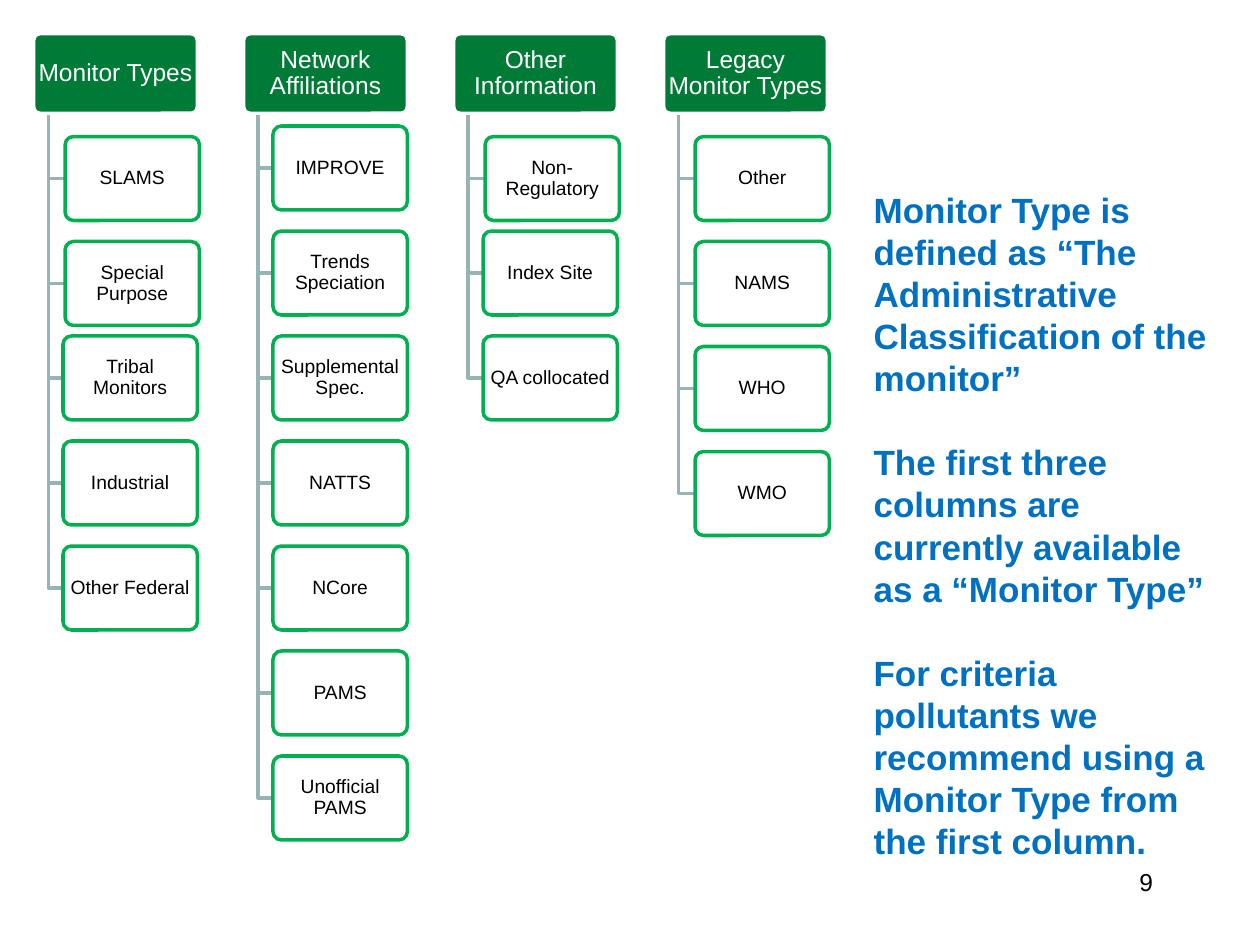
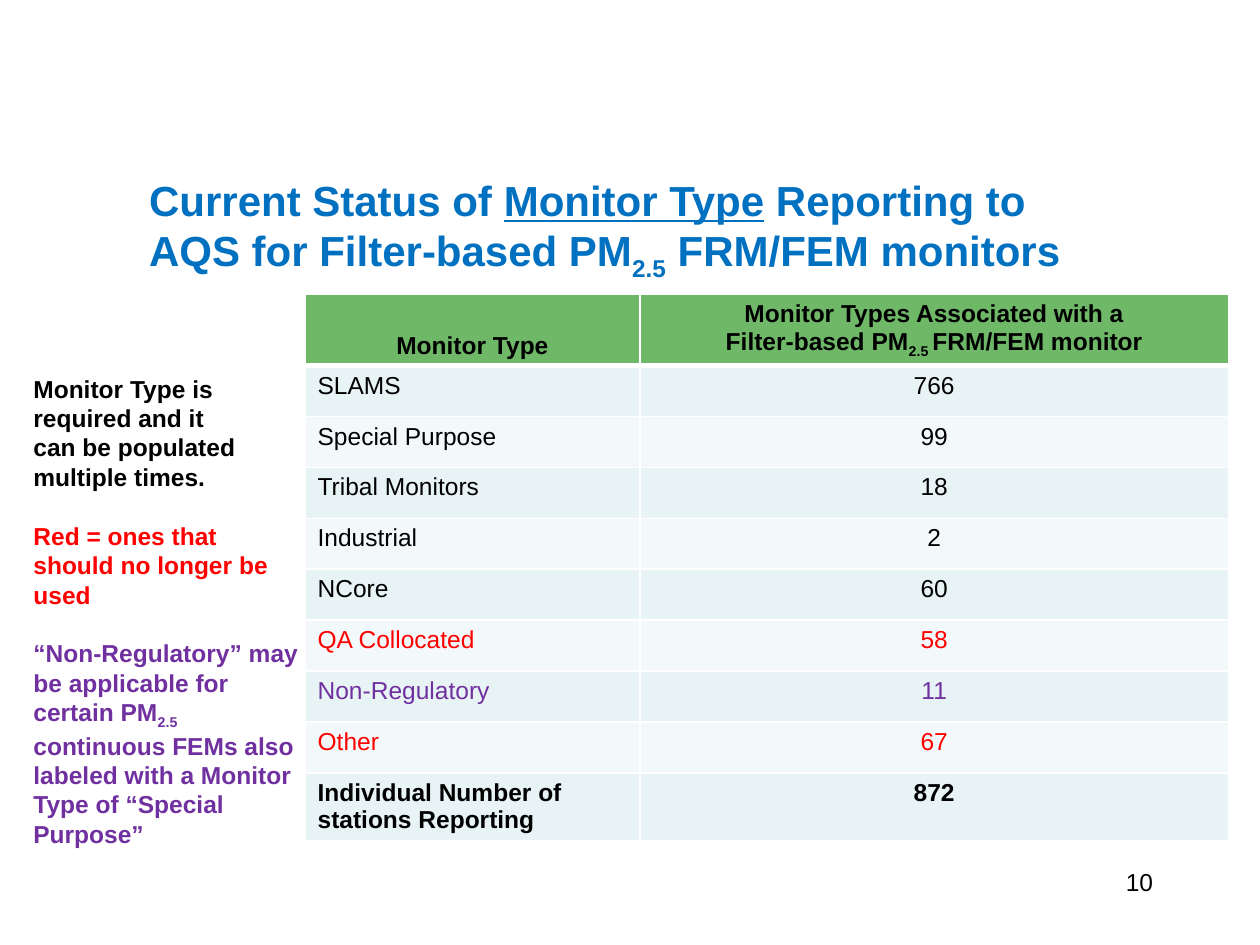
"""Builds two slides on monitor types: a column hierarchy and a status table."""
from dataclasses import dataclass

from lxml.etree import SubElement
from pptx import Presentation
from pptx.dml.color import RGBColor
from pptx.enum.shapes import MSO_SHAPE as Shape
from pptx.enum.text import MSO_ANCHOR as Anchor, PP_ALIGN as Align
from pptx.oxml.ns import qn
from pptx.util import Emu, Pt

PX = 3810
FONT = "Arial"
COLORS = {
    "white": "FFFFFF", "black": "000000", "blue": "0070C0", "red": "FF0000",
    "purple": "7030A0", "header": "007A37", "outline": "00B050", "elbow": "96B3B6",
    "table_head": "6EB868", "band_dark": "E7F3F4", "band_light": "F3F9FA",
}
HEADER_WIDTH, HEADER_HEIGHT, HEADER_TOP = 320, 160, 60
COLUMN_LEFT, COLUMN_PITCH = 60, 400
CHILD_WIDTH, CHILD_HEIGHT = 256, 160
CHILD_TOP, CHILD_PITCH, CHILD_INDENT = 240, 200, 60
TRUNK_INDENT = 32
NUDGE_X, NUDGE_Y = 4, 20


@dataclass(frozen=True)
class Frame:
    left: int
    top: int
    width: int
    height: int

    def emu(self) -> tuple:
        return tuple(px(side) for side in (self.left, self.top, self.width, self.height))


@dataclass(frozen=True)
class Column:
    heading: str
    children: tuple
    nudged: int = 0


@dataclass(frozen=True)
class Piece:
    text: str
    subscript: bool = False
    underline: bool = False


@dataclass(frozen=True)
class Style:
    size: int
    color: str = "black"
    bold: bool = False
    align: Align = Align.LEFT


@dataclass(frozen=True)
class Row:
    label: str
    count: str
    color: str = "black"
    bold: bool = False


@dataclass(frozen=True)
class Note:
    color: str
    lines: tuple


COLUMNS = (
    Column("Monitor Types", ("SLAMS", "Special Purpose", "Tribal Monitors",
                             "Industrial", "Other Federal"), 2),
    Column("Network Affiliations", ("IMPROVE", "Trends Speciation", "Supplemental Spec.",
                                    "NATTS", "NCore", "PAMS", "Unofficial PAMS")),
    Column("Other Information", ("Non-Regulatory", "Index Site", "QA collocated"), 1),
    Column("Legacy Monitor Types", ("Other", "NAMS", "WHO", "WMO"), 4),
)
DEFINITION = (
    "Monitor Type is defined as “The Administrative Classification of the monitor”",
    "The first three columns are currently available as a “Monitor Type”",
    "For criteria pollutants we recommend using a Monitor Type from the first column.",
)
PM_SIZE = Piece("2.5", subscript=True)
STATUS_TITLE = (Piece("Current Status of "), Piece("Monitor Type", underline=True),
                Piece(" Reporting to AQS for Filter-based PM"), PM_SIZE,
                Piece(" FRM/FEM monitors"))
TABLE_HEADINGS = (
    ((Piece("Monitor Type"),),),
    ((Piece("Monitor Types Associated with a"),),
     (Piece("Filter-based PM"), Piece("2.5 ", subscript=True), Piece("FRM/FEM monitor"))),
)
ROWS = (
    Row("SLAMS", "766"), Row("Special Purpose", "99"), Row("Tribal Monitors", "18"),
    Row("Industrial", "2"), Row("NCore", "60"), Row("QA Collocated", "58", "red"),
    Row("Non-Regulatory", "11", "purple"), Row("Other", "67", "red"),
    Row("Individual Number of stations Reporting", "872", bold=True),
)
NOTES = (
    Note("black", tuple((Piece(line),) for line in (
        "Monitor Type is", "required and it", "can be populated", "multiple times."))),
    Note("red", tuple((Piece(line),) for line in (
        "Red = ones that", "should no longer be", "used"))),
    Note("purple", ((Piece("“Non-Regulatory” may be applicable for certain PM"), PM_SIZE,
                     Piece(" continuous FEMs also labeled with a Monitor Type of "
                           "“Special Purpose”")),)),
)


def px(length: int) -> Emu:
    return Emu(length * PX)


def rgb(name: str) -> RGBColor:
    return RGBColor.from_string(COLORS[name])


def write(para, pieces: tuple, style: Style) -> None:
    para.alignment = style.align
    for piece in pieces:
        span = para.add_run()
        span.text = piece.text
        span.font.name = FONT
        span.font.size = Pt(style.size)
        span.font.bold = style.bold
        span.font.color.rgb = rgb(style.color)
        if piece.underline:
            span.font.underline = True
        if piece.subscript:
            span.font._element.set("baseline", "-25000")


def write_lines(text_frame, lines: tuple, style: Style) -> None:
    for index, pieces in enumerate(lines):
        para = text_frame.add_paragraph() if index else text_frame.paragraphs[0]
        write(para, pieces, style)


def place_title(slide, frame: Frame, lines: tuple, size: int, anchor: Anchor) -> None:
    title = slide.shapes.title
    title.left, title.top, title.width, title.height = frame.emu()
    title.text_frame.word_wrap = True
    title.text_frame.vertical_anchor = anchor
    write_lines(title.text_frame, lines, Style(size, "blue", True))
    for para in title.text_frame.paragraphs[1:]:
        para.space_before = Pt(size * 1.2)


def add_text_box(slide, frame: Frame):
    text_frame = slide.shapes.add_textbox(*frame.emu()).text_frame
    text_frame.word_wrap = True
    return text_frame


def add_page_number(slide, number: int) -> None:
    text_frame = add_text_box(slide, Frame(1720, 1640, 500, 120))
    write(text_frame.paragraphs[0], (Piece(str(number)),), Style(14, align=Align.RIGHT))


def add_node(slide, frame: Frame, text: str, style: Style, fill: str, line_width: float):
    box = slide.shapes.add_shape(Shape.ROUNDED_RECTANGLE, *frame.emu())
    box.shadow.inherit = False
    box.adjustments[0] = 0.1
    box.fill.solid()
    box.fill.fore_color.rgb = rgb(fill)
    box.line.color.rgb = rgb("white" if fill == "header" else "outline")
    box.line.width = Pt(line_width)
    text_frame = box.text_frame
    text_frame.word_wrap = True
    text_frame.vertical_anchor = Anchor.MIDDLE
    text_frame.margin_left = text_frame.margin_right = px(6 if fill == "header" else 4)
    text_frame.margin_top = text_frame.margin_bottom = px(4)
    para = text_frame.paragraphs[0]
    para.line_spacing = 0.9
    write(para, (Piece(text),), style)
    return box


def add_elbow(slide, trunk: int, child: Frame) -> None:
    middle = child.top + child.height // 2
    builder = slide.shapes.build_freeform(trunk, HEADER_TOP + HEADER_HEIGHT, scale=PX)
    builder.add_line_segments([(trunk, middle), (child.left, middle)], close=False)
    elbow = builder.convert_to_shape()
    elbow.shadow.inherit = False
    elbow.fill.background()
    elbow.line.color.rgb = rgb("elbow")
    elbow.line.width = Pt(2)


def add_column(slide, column: Column, left: int) -> None:
    header = Frame(left, HEADER_TOP, HEADER_WIDTH, HEADER_HEIGHT)
    add_node(slide, header, column.heading, Style(14, "white", align=Align.CENTER),
             "header", 4.5)
    for index, name in enumerate(column.children):
        shifted = index < column.nudged
        child = Frame(left + CHILD_INDENT + NUDGE_X * shifted,
                      CHILD_TOP + CHILD_PITCH * index + NUDGE_Y * shifted,
                      CHILD_WIDTH, CHILD_HEIGHT)
        add_elbow(slide, left + TRUNK_INDENT, child)
        box = add_node(slide, child, name, Style(11, align=Align.CENTER), "white", 2)
        color = box.fill._xPr.find(qn("a:solidFill"))[0]
        SubElement(color, qn("a:alpha"), val="90000")


def format_cell(cell, fill: str, bottom_width: int = 1) -> None:
    properties = cell._tc.get_or_add_tcPr()
    for side in "LRTB":
        width = bottom_width if side == "B" else 1
        border = SubElement(properties, qn(f"a:ln{side}"), w=str(Pt(width)))
        solid = SubElement(border, qn("a:solidFill"))
        SubElement(solid, qn("a:srgbClr"), val=COLORS["white"])
    cell.fill.solid()
    cell.fill.fore_color.rgb = rgb(fill)


def add_status_table(slide) -> None:
    frame = Frame(581, 560, 1759, 1035)
    table = slide.shapes.add_table(len(ROWS) + 1, 2, *frame.emu()).table
    for table_column, width in zip(table.columns, (638, 1121)):
        table_column.width = px(width)
    for table_row, height in zip(table.rows, (133, *[97] * (len(ROWS) - 1), 126)):
        table_row.height = px(height)
    for index, lines in enumerate(TABLE_HEADINGS):
        cell = table.cell(0, index)
        format_cell(cell, "table_head", 3)
        cell.vertical_anchor = Anchor.BOTTOM
        write_lines(cell.text_frame, lines, Style(14, bold=True, align=Align.CENTER))
    for number, row in enumerate(ROWS, 1):
        entries = ((row.label, Align.LEFT), (row.count, Align.CENTER))
        for index, (text, align) in enumerate(entries):
            cell = table.cell(number, index)
            format_cell(cell, "band_dark" if number % 2 else "band_light")
            write(cell.text_frame.paragraphs[0], (Piece(text),),
                  Style(14, row.color, row.bold, align))


def add_notes_column(slide) -> None:
    text_frame = add_text_box(slide, Frame(40, 700, 560, 1042))
    for group, note in enumerate(NOTES):
        for index, pieces in enumerate(note.lines):
            first = group == index == 0
            para = text_frame.paragraphs[0] if first else text_frame.add_paragraph()
            if group and not index:
                para.space_before = Pt(16.8)
            write(para, pieces, Style(14, note.color, True))


def build_hierarchy_slide(slide) -> None:
    lines = tuple((Piece(line),) for line in DEFINITION)
    place_title(slide, Frame(1640, 660, 720, 680), lines, 20, Anchor.MIDDLE)
    for index, column in enumerate(COLUMNS):
        add_column(slide, column, COLUMN_LEFT + COLUMN_PITCH * index)


def build_status_slide(slide) -> None:
    place_title(slide, Frame(260, 320, 1820, 218), (STATUS_TITLE,), 24, Anchor.TOP)
    add_status_table(slide)
    add_notes_column(slide)


def main() -> None:
    deck = Presentation()
    deck.slide_width, deck.slide_height = px(2400), px(1800)
    for number, build in enumerate((build_hierarchy_slide, build_status_slide), 9):
        page = deck.slides.add_slide(deck.slide_layouts[5])
        build(page)
        add_page_number(page, number)
    deck.save("out.pptx")


if __name__ == "__main__":
    main()
